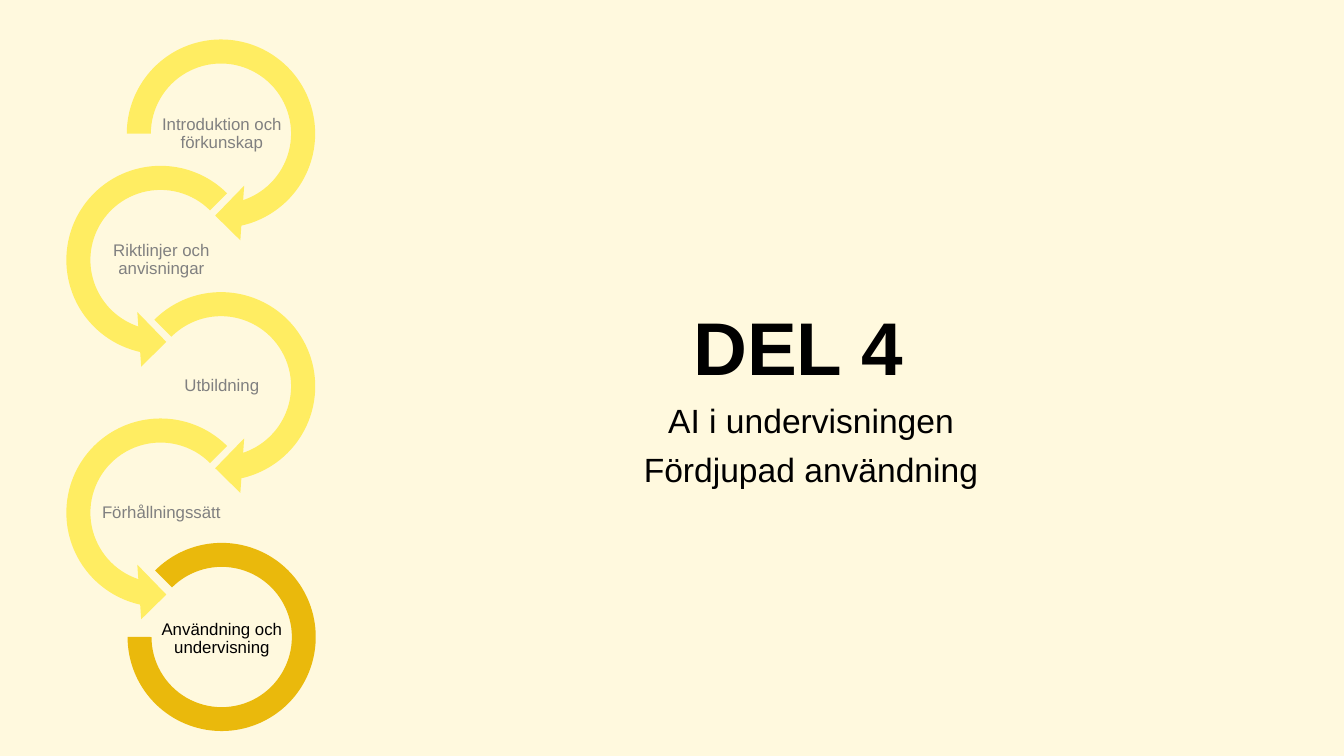
from pptx import Presentation
from pptx.dml.color import RGBColor
from pptx.enum.shapes import MSO_SHAPE as Shape
from pptx.enum.text import MSO_ANCHOR as Anchor, PP_ALIGN as Align
from pptx.util import Inches, Pt

TITLE = "DEL 4"
TOPICS = ["AI i undervisningen", "Fördjupad användning"]
COLORS = {
    "background": "FFF9DE", "done": "FFED62", "current": "EAB90C",
    "muted": "808080", "text": "000000",
}
RIGHT_START = (Shape.CIRCULAR_ARROW, [0.11, 11.423, 45, 108, 0.125])
RIGHT_TURN = (Shape.CIRCULAR_ARROW, [0.11, 11.423, 45, 135, 0.125])
LEFT_TURN = (Shape.LEFT_CIRCULAR_ARROW, [0.11, 11.423, 63, 189, 0.125])
FINAL_ARC = (Shape.BLOCK_ARC, [135, 108, 0.127])
STEPS = [
    ("Introduktion och förkunskap", RIGHT_START),
    ("Riktlinjer och anvisningar", LEFT_TURN),
    ("Utbildning", RIGHT_TURN),
    ("Förhållningssätt", LEFT_TURN),
    ("Användning och undervisning", FINAL_ARC),
]

SLIDE_WIDTH = Inches(10)
SLIDE_HEIGHT = SLIDE_WIDTH * 9 // 16
COLUMNS = (0.83, 0.38)
FIRST_ROW, ROW_PITCH = 0.18, 0.94
RING_SIZE, ARC_SIZE = 1.63, 1.4
ARC_OFFSET = (0.12, 0.1)
LABEL_OFFSET, LABEL_SIZE = (0.36, 0.59), (0.92, 0.45)

TITLE_FONT = {"name": "Arial", "size": Pt(40), "bold": True}
TOPIC_FONT = {"name": "Arial", "size": Pt(18)}
LABEL_FONT = {"name": "Arial", "size": Pt(9)}
TOPIC_SPACING = {"line_spacing": 0.9, "space_after": Pt(7)}
LABEL_SPACING = {"line_spacing": 0.9}


def rgb(role):
    return RGBColor.from_string(COLORS[role])


def apply(target, values):
    for attribute, value in values.items():
        setattr(target, attribute, value)


def frame_format(inset):
    margins = {f"margin_{side}": Inches(inset)
               for side in ("left", "top", "right", "bottom")}
    return {"vertical_anchor": Anchor.MIDDLE, **margins}


def add_text(shapes, box, lines, font, role, spacing, frame):
    text = shapes.add_textbox(*map(Inches, box)).text_frame
    apply(text, {"word_wrap": True, **frame})
    for index, line in enumerate(lines):
        paragraph = text.add_paragraph() if index else text.paragraphs[0]
        paragraph.text = line
        apply(paragraph, {"alignment": Align.CENTER, **spacing})
        apply(paragraph.font, font)
        paragraph.font.color.rgb = rgb(role)


def add_ring(shapes, kind, adjustments, left, top, size, role):
    ring = shapes.add_shape(kind, *map(Inches, (left, top, size, size)))
    for index, value in enumerate(adjustments):
        ring.adjustments[index] = value
    ring.fill.solid()
    ring.fill.fore_color.rgb = rgb(role)
    ring.line.fill.background()
    ring.shadow.inherit = False


def main():
    deck = Presentation()
    apply(deck, {"slide_width": SLIDE_WIDTH, "slide_height": SLIDE_HEIGHT})
    slide = deck.slides.add_slide(deck.slide_layouts[6])
    slide.background.fill.solid()
    slide.background.fill.fore_color.rgb = rgb("background")

    add_text(slide.shapes, (1.62, 0.41, 8.64, 4.32), [TITLE],
             TITLE_FONT, "text", {}, frame_format(0))
    add_text(slide.shapes, (4.27, 2.96, 3.53, 1.56), TOPICS,
             TOPIC_FONT, "text", TOPIC_SPACING, {})

    chain = slide.shapes.add_group_shape().shapes
    for row, (label, (kind, adjustments)) in enumerate(STEPS):
        left = COLUMNS[row % 2]
        top = FIRST_ROW + row * ROW_PITCH
        current = row == len(STEPS) - 1
        dx, dy = ARC_OFFSET if current else (0, 0)
        add_ring(chain, kind, adjustments, left + dx, top + dy,
                 ARC_SIZE if current else RING_SIZE,
                 "current" if current else "done")
        label_box = (left + LABEL_OFFSET[0], top + LABEL_OFFSET[1], *LABEL_SIZE)
        add_text(chain, label_box, [label], LABEL_FONT,
                 "text" if current else "muted", LABEL_SPACING, frame_format(0.01))

    deck.save("out.pptx")


if __name__ == "__main__":
    main()
